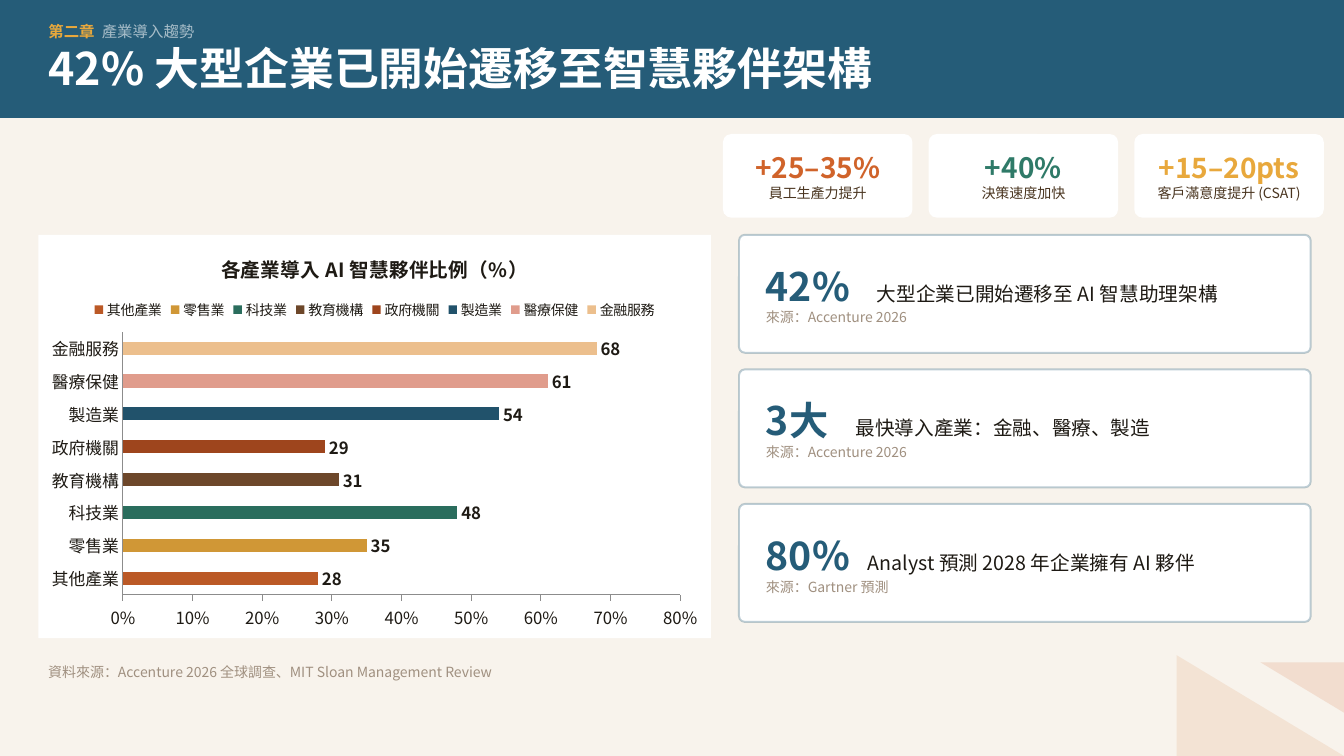
"""Build the slide on industry adoption of intelligent partner architectures."""
import lxml.etree
import pptx
import pptx.chart.data
import pptx.dml.color
import pptx.enum.chart
import pptx.enum.shapes
import pptx.enum.text
import pptx.oxml
import pptx.oxml.ns
import pptx.util

Inches = pptx.util.Inches
Pt = pptx.util.Pt
qn = pptx.oxml.ns.qn
SHAPES = pptx.enum.shapes.MSO_SHAPE
ALIGN = pptx.enum.text.PP_ALIGN

BODY_FONT = "Noto Sans CJK SC"
CHART_FONT = "Noto Sans CJK TC"
WHITE, BLUE, ORANGE, GOLD, GREEN = "FFFFFF", "255C78", "D0632A", "E8A83C", "2F7A68"
INK, MUTED, BROWN = "1E1A14", "A09080", "4A3520"

INDUSTRIES = [
    ("其他產業", 28, "BB5926"), ("零售業", 35, "D09736"),
    ("科技業", 48, "2A6D5D"), ("教育機構", 31, "6D472A"),
    ("政府機關", 29, "9E451D"), ("製造業", 54, "21526B"),
    ("醫療保健", 61, "E09C8C"), ("金融服務", 68, "ECBF8D"),
]
GAINS = [
    ("+25–35%", "員工生產力提升", ORANGE),
    ("+40%", "決策速度加快", GREEN),
    ("+15–20pts", "客戶滿意度提升 (CSAT)", GOLD),
]
FINDINGS = [
    ("42%", "大型企業已開始遷移至 AI 智慧助理架構", "來源：Accenture 2026", 1.1),
    ("3大", "最快導入產業：金融、醫療、製造", "來源：Accenture 2026", 0.89),
    ("80%", "Analyst 預測 2028 年企業擁有 AI 夥伴", "來源：Gartner 預測", 1.01),
]


def paint(fill, color, opacity=100):
    """Give a fill a solid colour with an opacity in percent."""
    fill.solid()
    fill.fore_color.rgb = pptx.dml.color.RGBColor.from_string(color)
    if opacity < 100:
        rgb = fill._xPr.find(f".//{qn('a:solidFill')}/{qn('a:srgbClr')}")
        lxml.etree.SubElement(rgb, qn("a:alpha"), val=str(opacity * 1000))


def style_font(font, size, color, bold=False, face=BODY_FONT, opacity=100):
    """Set size, colour, weight and typeface of a font."""
    font.size, font.bold, font.name = Pt(size), bold, face
    paint(font.fill, color, opacity)
    lxml.etree.SubElement(font._element, qn("a:ea"), typeface=face)


def add_text(paragraph, text, align=ALIGN.LEFT, **format):
    """Append a formatted run to a paragraph."""
    paragraph.alignment = align
    run = paragraph.add_run()
    run.text = text
    style_font(run.font, **format)


def add_tab_stop(paragraph, position):
    """Add a left tab stop at a distance in inches."""
    stops = lxml.etree.SubElement(paragraph._p.get_or_add_pPr(), qn("a:tabLst"))
    lxml.etree.SubElement(stops, qn("a:tab"), pos=str(Inches(position)), algn="l")


def prepare_frame(frame):
    """Wrap and vertically centre a text frame."""
    frame.word_wrap = True
    frame.auto_size = pptx.enum.text.MSO_AUTO_SIZE.NONE
    frame.vertical_anchor = pptx.enum.text.MSO_ANCHOR.MIDDLE
    return frame


def add_panel(slide, kind, box, color, opacity=100, radius=None):
    """Add a plain filled shape without outline."""
    panel = slide.shapes.add_shape(kind, *map(Inches, box))
    panel.shadow.inherit = False
    paint(panel.fill, color, opacity)
    panel.line.fill.background()
    if radius is not None:
        panel.adjustments[0] = radius
    return panel


def add_header(slide):
    """Add the chapter label and the headline."""
    title = slide.shapes.title
    title.left, title.top, title.width, title.height = map(Inches, (0.38, 0.12, 12.25, 0.92))
    frame = prepare_frame(title.text_frame)
    chapter = frame.paragraphs[0]
    add_tab_stop(chapter, 0.53)
    add_text(chapter, "第二章\t", size=11, color=GOLD, bold=True)
    add_text(chapter, "產業導入趨勢", size=11, color=WHITE, opacity=60)
    add_text(frame.add_paragraph(), "42% 大型企業已開始遷移至智慧夥伴架構",
             size=32, color=WHITE, bold=True)


def add_gain(slide, left, figure, caption, color):
    """Add a small card with a centred gain figure."""
    card = add_panel(slide, SHAPES.ROUNDED_RECTANGLE, (left, 1.33, 1.88, 0.83), WHITE, radius=0.1)
    frame = prepare_frame(card.text_frame)
    add_text(frame.paragraphs[0], figure, ALIGN.CENTER, size=20, color=color, bold=True)
    add_text(frame.add_paragraph(), caption, ALIGN.CENTER, size=10, color=BROWN)


def add_finding(slide, top, figure, statement, source, tab):
    """Add an outlined card with a key finding and its source."""
    card = add_panel(slide, SHAPES.ROUNDED_RECTANGLE, (7.33, top, 5.67, 1.17), WHITE, radius=0.05)
    card.line.width = Pt(1.42)
    paint(card.line.fill, BLUE, 30)
    frame = prepare_frame(card.text_frame)
    frame.margin_left = frame.margin_right = Inches(0.25)
    headline = frame.paragraphs[0]
    add_tab_stop(headline, tab)
    add_text(headline, figure + "\t", size=28, color=BLUE, bold=True)
    add_text(headline, statement, size=14, color=INK)
    add_text(frame.add_paragraph(), source, size=10, color=MUTED)


def style_axis(axis, tick):
    """Format an axis without gridlines."""
    axis.has_major_gridlines = False
    axis.major_tick_mark = tick
    axis.minor_tick_mark = pptx.enum.chart.XL_TICK_MARK.NONE
    style_font(axis.tick_labels.font, 12, INK)
    axis.format.line.width = Pt(0.75)
    paint(axis.format.line.fill, "8C8C8C")


def fill_chart_area(chart, color):
    """Give the chart area a solid fill and no outline."""
    area = pptx.oxml.parse_xml(
        '<c:spPr xmlns:c="http://schemas.openxmlformats.org/drawingml/2006/chart" '
        'xmlns:a="http://schemas.openxmlformats.org/drawingml/2006/main">'
        f'<a:solidFill><a:srgbClr val="{color}"/></a:solidFill>'
        '<a:ln><a:noFill/></a:ln></c:spPr>')
    chart._chartSpace.find(qn("c:chart")).addnext(area)


def add_adoption_chart(slide):
    """Add the bar chart of adoption rates by industry."""
    names, rates, colors = zip(*INDUSTRIES)
    data = pptx.chart.data.CategoryChartData()
    data.categories = names
    data.add_series("Series 1", rates)
    chart = slide.shapes.add_chart(pptx.enum.chart.XL_CHART_TYPE.BAR_CLUSTERED,
                                   *map(Inches, (0.38, 2.33, 6.67, 4)), data).chart
    style_font(chart.font, 10, INK, face=CHART_FONT)
    fill_chart_area(chart, WHITE)
    add_text(chart.chart_title.text_frame.paragraphs[0], "各產業導入 AI 智慧夥伴比例（%）",
             ALIGN.CENTER, size=14, color=INK, bold=True, face=CHART_FONT)
    chart.has_legend = True
    chart.legend.position = pptx.enum.chart.XL_LEGEND_POSITION.TOP
    chart.legend.include_in_layout = False
    style_font(chart.legend.font, 10, INK, face=CHART_FONT)
    style_axis(chart.category_axis, pptx.enum.chart.XL_TICK_MARK.NONE)
    rate_axis = chart.value_axis
    style_axis(rate_axis, pptx.enum.chart.XL_TICK_MARK.OUTSIDE)
    rate_axis.minimum_scale, rate_axis.maximum_scale, rate_axis.major_unit = 0, 80, 10
    rate_axis.tick_labels.number_format = '0"%"'
    rate_axis.tick_labels.number_format_is_linked = False
    plot = chart.plots[0]
    plot.gap_width = 150
    plot.vary_by_categories = True
    plot.has_data_labels = True
    plot.data_labels.show_value = True
    plot.data_labels.position = pptx.enum.chart.XL_LABEL_POSITION.OUTSIDE_END
    style_font(plot.data_labels.font, 12, INK, bold=True)
    for index, color in enumerate(colors):
        paint(plot.series[0].points[index].format.fill, color)


def main():
    """Assemble and save the slide."""
    deck = pptx.Presentation()
    deck.slide_width, deck.slide_height = Inches(13.33), Inches(7.5)
    slide = deck.slides.add_slide(deck.slide_layouts[5])
    paint(slide.background.fill, "F8F3EC")
    add_panel(slide, SHAPES.RIGHT_TRIANGLE, (11.67, 6.5, 1.66, 1), "D4722A", 12)
    corner = add_panel(slide, SHAPES.RIGHT_TRIANGLE, (12.5, 6.57, 0.83, 0.5), ORANGE, 15)
    corner.rotation = 180
    band = add_panel(slide, SHAPES.RECTANGLE, (0, 0, 13.33, 1.17), BLUE)
    slide.shapes.title._element.getparent().insert(2, band._element)
    add_header(slide)
    for index, gain in enumerate(GAINS):
        add_gain(slide, 7.17 + 2.04 * index, *gain)
    source = slide.shapes.add_textbox(*map(Inches, (0.38, 6.5, 12.58, 0.33)))
    add_text(prepare_frame(source.text_frame).paragraphs[0],
             "資料來源：Accenture 2026 全球調查、MIT Sloan Management Review", size=10, color=MUTED)
    add_adoption_chart(slide)
    for index, finding in enumerate(FINDINGS):
        add_finding(slide, 2.33 + 1.335 * index, *finding)
    deck.save("out.pptx")


if __name__ == "__main__":
    main()
